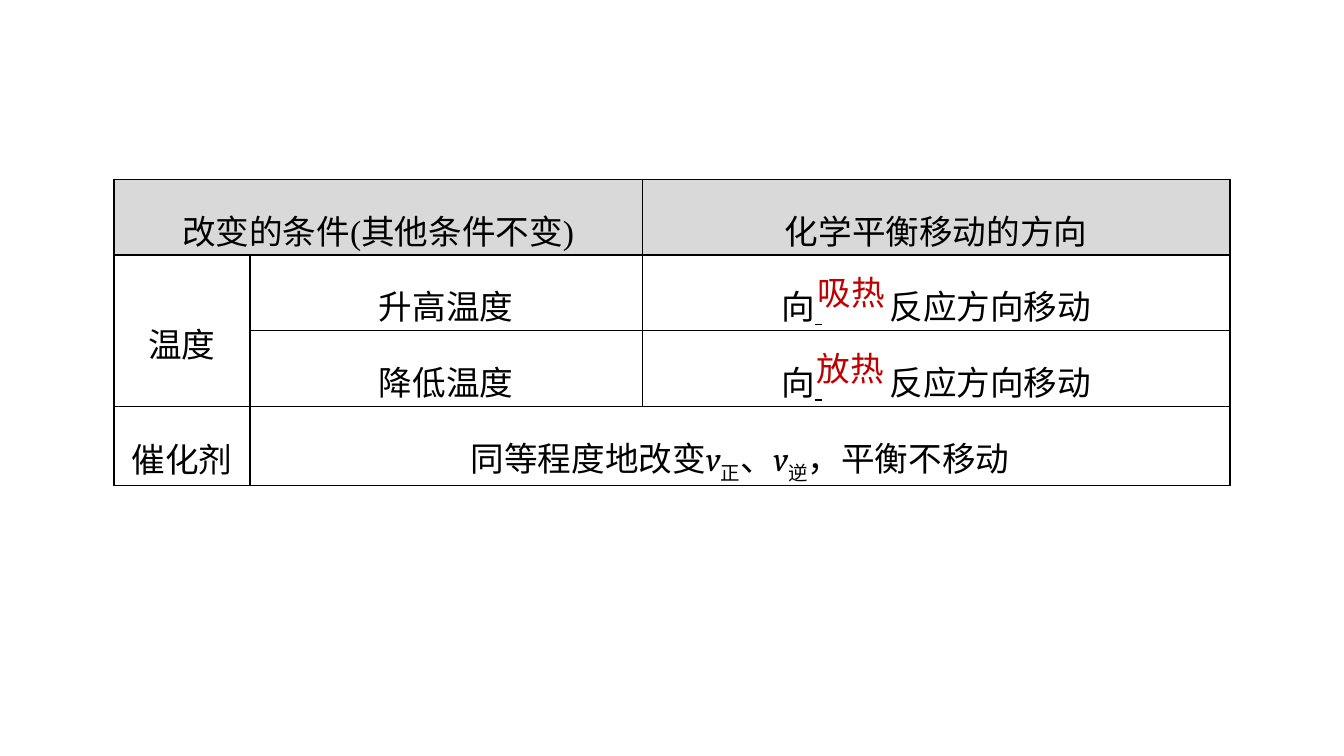
"""Builds a slide on how temperature and catalysts shift chemical equilibrium."""
from lxml.etree import SubElement
from pptx import Presentation
from pptx.dml.color import RGBColor
from pptx.enum.text import MSO_ANCHOR, MSO_AUTO_SIZE, PP_ALIGN
from pptx.oxml.ns import qn
from pptx.util import Inches, Pt

BLACK = RGBColor(0x00, 0x00, 0x00)
RED = RGBColor(0xC0, 0x00, 0x00)
HEADER_GRAY = RGBColor(0xD9, 0xD9, 0xD9)


def add_text(paragraph, text, color=BLACK, font="Times New Roman", italic=False,
             underline=False, baseline=0, spacing=0):
    run = paragraph.add_run()
    run.text = text
    run.font.size = Pt(24)
    run.font.name = font
    run.font.color.rgb = color
    run.font.italic = italic
    run.font.underline = underline
    properties = run.font._element
    if baseline:
        properties.set("baseline", str(baseline * 1000))
    if spacing:
        properties.set("spc", str(spacing * 100))


def add_borders(cell):
    properties = cell._tc.get_or_add_tcPr()
    for position, side in enumerate(("lnL", "lnR", "lnT", "lnB")):
        line = SubElement(properties, qn(f"a:{side}"), w=str(Pt(1)))
        fill = SubElement(line, qn("a:solidFill"))
        SubElement(fill, qn("a:srgbClr"), val=str(BLACK))
        properties.insert(position, line)


presentation = Presentation()
presentation.slide_width = Inches(13.33)
presentation.slide_height = Inches(7.5)
slide = presentation.slides.add_slide(presentation.slide_layouts[6])

table = slide.shapes.add_table(4, 3, Inches(1.13), Inches(1.78), Inches(11.07), Inches(3)).table
table.first_row = False
table.horz_banding = False
for column, width in zip(table.columns, (1.35, 3.89, 5.83)):
    column.width = Inches(width)
for row in table.rows:
    row.height = Inches(0.75)

variable = {"font": "Cambria", "italic": True}
subscript = {"baseline": -25}
blank_sentence = [
    ("向", {}),
    (" ", {"underline": True, "spacing": 48}),
    ("反应方向移动", {}),
]
catalyst_sentence = [
    ("同等程度地改变", {}),
    ("v", variable),
    ("正", subscript),
    ("、", {}),
    ("v", variable),
    ("逆", subscript),
    ("，平衡不移动", {}),
]
cell_runs = {
    (0, 0): [("改变的条件(其他条件不变)", {})],
    (0, 2): [("化学平衡移动的方向", {})],
    (1, 0): [("温度", {})],
    (1, 1): [("升高温度", {})],
    (1, 2): blank_sentence,
    (2, 1): [("降低温度", {})],
    (2, 2): blank_sentence,
    (3, 0): [("催化剂", {})],
    (3, 1): catalyst_sentence,
}

for row_index in range(4):
    for column_index in range(3):
        cell = table.cell(row_index, column_index)
        cell.margin_left = cell.margin_right = Inches(0.03)
        cell.margin_top = cell.margin_bottom = 0
        cell.vertical_anchor = MSO_ANCHOR.MIDDLE
        if row_index == 0:
            cell.fill.solid()
            cell.fill.fore_color.rgb = HEADER_GRAY
        else:
            cell.fill.background()
        add_borders(cell)
        paragraph = cell.text_frame.paragraphs[0]
        paragraph.alignment = PP_ALIGN.CENTER
        paragraph.line_spacing = 1.5
        for text, text_format in cell_runs.get((row_index, column_index), []):
            add_text(paragraph, text, **text_format)

for first, last in (((0, 0), (0, 1)), ((1, 0), (2, 0)), ((3, 1), (3, 2))):
    table.cell(*first).merge(table.cell(*last))

for answer, left, top in (("吸热", 8.01, 2.65), ("放热", 8, 3.4)):
    answer_box = slide.shapes.add_textbox(Inches(left), Inches(top), Inches(0.88), Inches(0.5))
    answer_box.text_frame.word_wrap = False
    answer_box.text_frame.auto_size = MSO_AUTO_SIZE.SHAPE_TO_FIT_TEXT
    add_text(answer_box.text_frame.paragraphs[0], answer, color=RED)

presentation.save("out.pptx")
